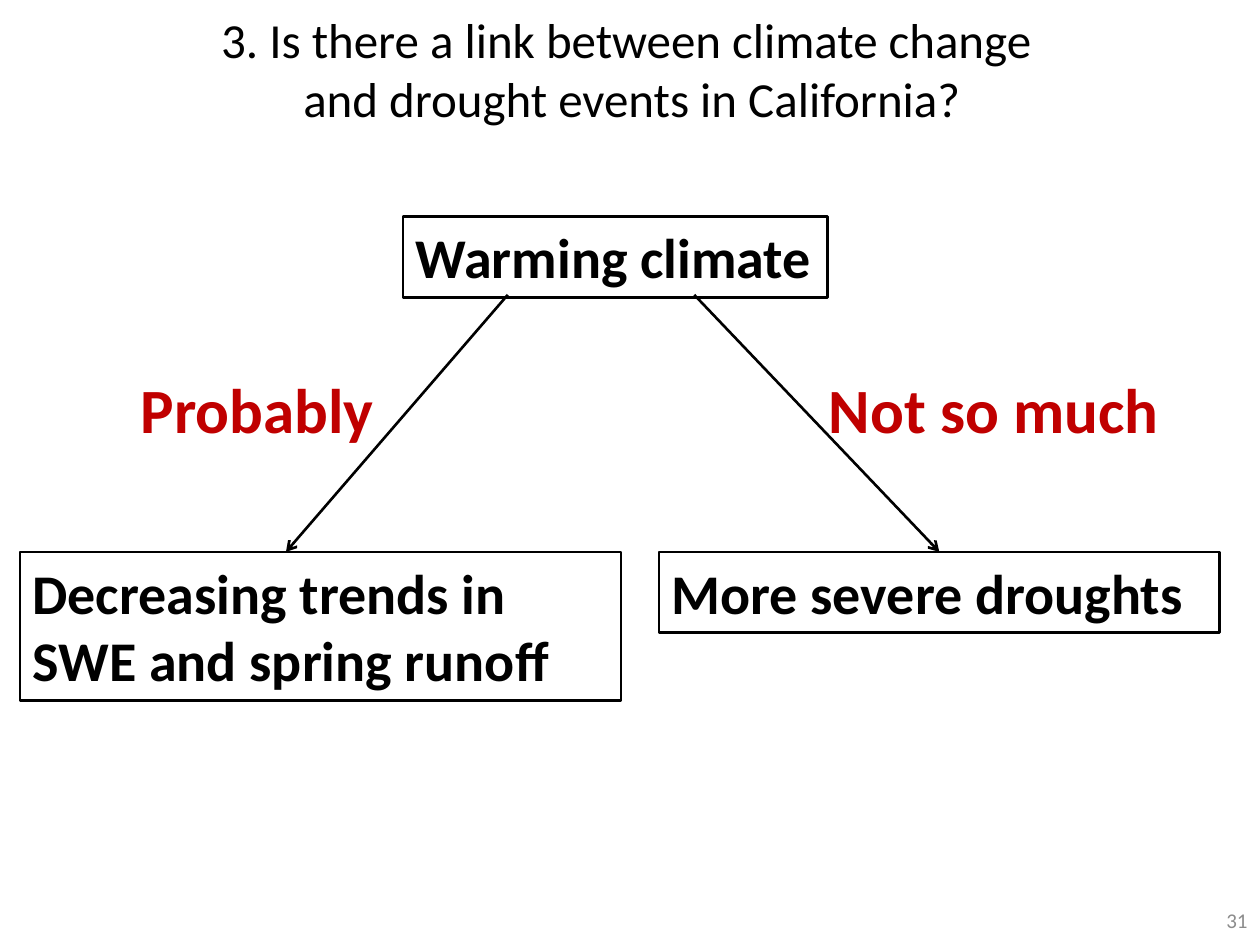
from lxml.etree import SubElement
from pptx import Presentation
from pptx.dml.color import RGBColor
from pptx.enum.shapes import MSO_CONNECTOR as Connector
from pptx.enum.text import MSO_ANCHOR as Anchor, MSO_AUTO_SIZE as AutoSize, PP_ALIGN as Align
from pptx.oxml.ns import qn
from pptx.util import Inches, Pt

BLACK = RGBColor(0x00, 0x00, 0x00)
RED = RGBColor(0xC0, 0x00, 0x00)
GREY = RGBColor(0x8C, 0x8C, 0x8C)
FONT = "Calibri"
COLUMNS, ROWS = 100, 75
CELL = Inches(10) // COLUMNS

BOX_TOP, BOX_HEIGHT = 43.8, 6.4
CAUSE_TOP = 17.2
ARROW_TOP = 23.4
ANSWER_TOP, ANSWER_HEIGHT = 28.9, 7.1


def grid(*cells):
    """Turn columns and rows into slide lengths."""
    return [round(cell * CELL) for cell in cells]


def add_text(page, area, text, size, color=BLACK, bold=False, align=Align.LEFT,
             anchor=Anchor.TOP, wrap=True, fit=AutoSize.NONE):
    box = page.shapes.add_textbox(*grid(*area))
    frame = box.text_frame
    frame.word_wrap = wrap
    frame.auto_size = fit
    frame.vertical_anchor = anchor
    para = frame.paragraphs[0]
    para.text = text
    para.alignment = align
    para.font.name = FONT
    para.font.size = Pt(size)
    para.font.bold = bold
    para.font.color.rgb = color
    return box


def add_framed_text(page, area, text, wrap=True):
    box = add_text(page, area, text, 32, bold=True, wrap=wrap,
                   fit=AutoSize.SHAPE_TO_FIT_TEXT)
    box.line.color.rgb = BLACK
    box.line.width = Pt(1.5)
    return box


def add_answer(page, left, width, text):
    add_text(page, (left, ANSWER_TOP, width, ANSWER_HEIGHT), text, 36, RED,
             bold=True, wrap=False, fit=AutoSize.SHAPE_TO_FIT_TEXT)


def add_arrow(page, start_column, end_column):
    arrow = page.shapes.add_connector(
        Connector.STRAIGHT, *grid(start_column, ARROW_TOP, end_column, BOX_TOP))
    arrow.line.color.rgb = BLACK
    arrow.line.width = Pt(1.5)
    SubElement(arrow.line._get_or_add_ln(), qn("a:tailEnd"), type="arrow")
    SubElement(arrow._element.spPr, qn("a:effectLst"))
    return arrow


def add_title(page, area):
    add_text(page, area,
             "3. Is there a link between climate change\v and drought events in California?",
             28, align=Align.CENTER, anchor=Anchor.MIDDLE)


def add_diagram(page):
    add_framed_text(page, (32, CAUSE_TOP, 33.7, BOX_HEIGHT), "Warming climate", wrap=False)
    add_framed_text(page, (1.6, BOX_TOP, 47.7, 11.8),
                    "Decreasing trends in SWE and spring runoff")
    droughts = add_framed_text(page, (52.3, BOX_TOP, 44.5, BOX_HEIGHT),
                               "More severe droughts")
    add_arrow(page, 40.3, 22.7)
    add_answer(page, 10.2, 20.7, "Probably")
    add_arrow(page, 55.1, 74.6).end_connect(droughts, 0)
    add_answer(page, 64.8, 28.5, "Not so much")


def add_page_number(page, area):
    add_text(page, area, "31", 12, GREY, align=Align.RIGHT, anchor=Anchor.MIDDLE)


def main():
    deck = Presentation()
    deck.slide_width, deck.slide_height = grid(COLUMNS, ROWS)
    page = deck.slides.add_slide(deck.slide_layouts[6])
    add_title(page, (4.7, 0, 90, 10.9))
    add_diagram(page)
    add_page_number(page, (96.1, 71, 3.9, 4))
    deck.save("out.pptx")


if __name__ == "__main__":
    main()
